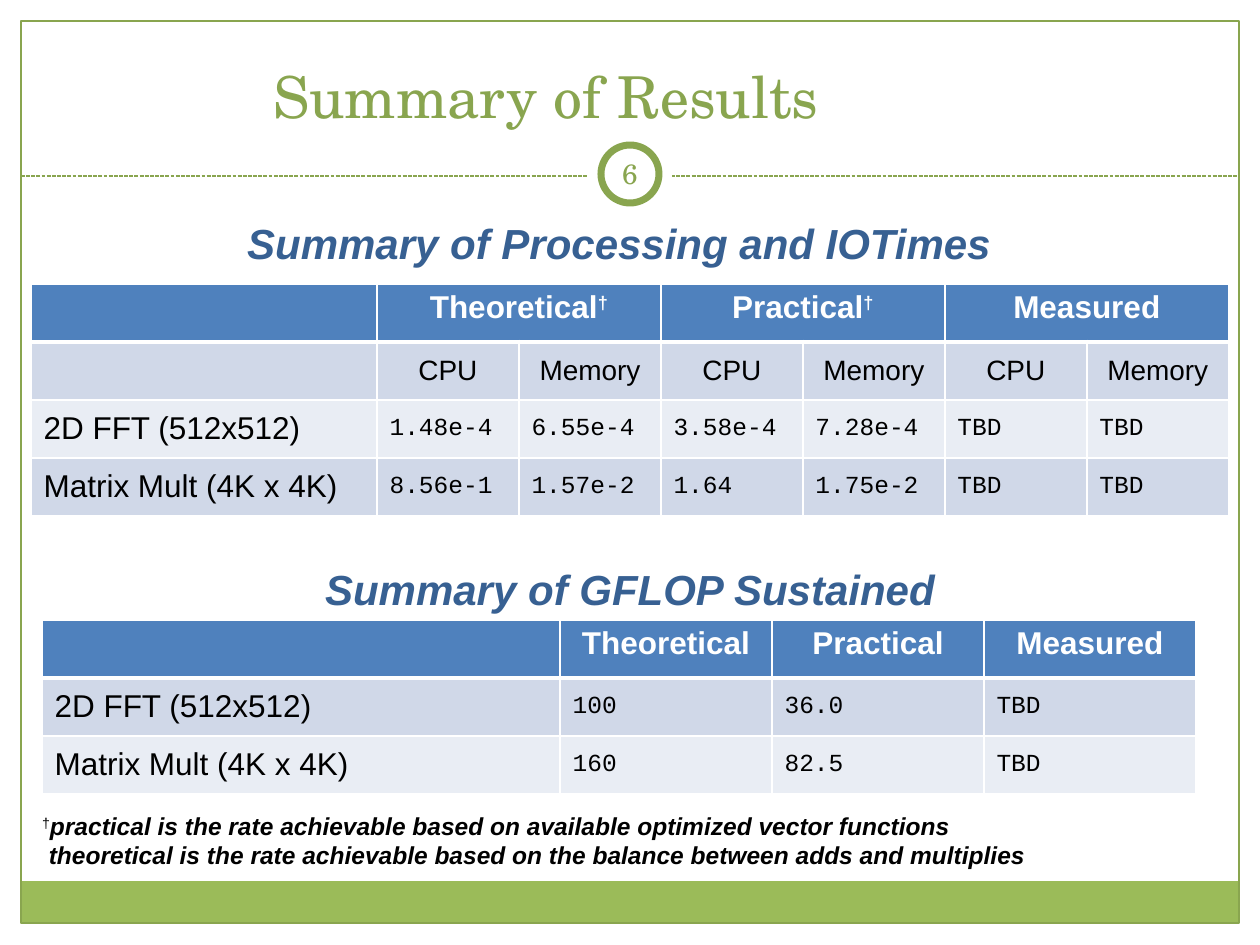
from dataclasses import dataclass, replace
from typing import NamedTuple

from lxml.etree import SubElement
from pptx import Presentation
from pptx.dml.color import RGBColor
from pptx.enum.dml import MSO_LINE
from pptx.enum.shapes import MSO_CONNECTOR, MSO_SHAPE
from pptx.enum.text import MSO_ANCHOR, PP_ALIGN
from pptx.oxml.ns import qn
from pptx.util import Emu, Pt

PIXELS_PER_INCH = 126


@dataclass(frozen=True)
class Style:
    """Look of a run of text."""
    size: int
    color: str
    font: str = "Arial"
    bold: bool = False
    italic: bool = False
    raised: bool = False


@dataclass(frozen=True)
class Theme:
    """Colours and text styles of the slide."""
    white: str = "FFFFFF"
    outline: str = "89A54F"
    footer: str = "9BBB59"
    header: str = "4F81BD"
    bands: tuple[str, str] = ("D0D8E8", "E9EDF4")
    title: Style = Style(33, "89A54F", "TeX Gyre Schola")
    number: Style = Style(16, "89A54F", "TeX Gyre Schola")
    caption: Style = Style(24, "376092", bold=True, italic=True)
    heading: Style = Style(18, "FFFFFF", bold=True)
    subheading: Style = Style(16, "000000")
    label: Style = Style(18, "000000")
    value: Style = Style(14, "000000", "Courier New")
    note: Style = Style(14, "000000", bold=True, italic=True)
    note_mark: Style = Style(14, "000000", raised=True)


class Box(NamedTuple):
    """Left, top, width and height in px."""
    left: int
    top: int
    width: int
    height: int


class Piece(NamedTuple):
    """A run of text with its style."""
    text: str
    style: Style


class TableData(NamedTuple):
    """Place, column widths, header span and rows of a table."""
    left: int
    top: int
    columns: list[int]
    span: int
    headings: list[list[Piece]]
    subheadings: list[str]
    rows: list[list[str]]


THEME = Theme()
ROW_HEIGHT = 58
MARK = Piece("†", replace(THEME.heading, raised=True))
THEORETICAL, PRACTICAL, MEASURED = (
    Piece(text, THEME.heading) for text in ("Theoretical", "Practical", "Measured"))
FFT, MATRIX = "2D FFT (512x512)", "Matrix Mult (4K x 4K)"

TIMES = TableData(
    31, 284, [346] + [142] * 6, 2,
    [[THEORETICAL, MARK], [PRACTICAL, MARK], [MEASURED]],
    ["CPU", "Memory"] * 3,
    [[FFT, "1.48e-4", "6.55e-4", "3.58e-4", "7.28e-4", "TBD", "TBD"],
     [MATRIX, "8.56e-1", "1.57e-2", "1.64", "1.75e-2", "TBD", "TBD"]])
GFLOP = TableData(
    42, 620, [518] + [212] * 3, 1,
    [[THEORETICAL], [PRACTICAL], [MEASURED]],
    [],
    [[FFT, "100", "36.0", "TBD"], [MATRIX, "160", "82.5", "TBD"]])


def px(length: int) -> Emu:
    """Turn px into EMU."""
    return Emu(round(length * 914400 / PIXELS_PER_INCH))


def rgb(color: str) -> RGBColor:
    """Turn a hex string into a colour."""
    return RGBColor.from_string(color)


def write(paragraph, pieces: list[Piece], align=PP_ALIGN.LEFT) -> None:
    """Fill a paragraph with styled runs."""
    paragraph.text = pieces[0].text
    paragraph.alignment = align
    for piece in pieces[1:]:
        paragraph.add_run().text = piece.text
    for run, (_, style) in zip(paragraph.runs, pieces):
        font = run.font
        font.name, font.size = style.font, Pt(style.size)
        font.bold, font.italic = style.bold, style.italic
        font.color.rgb = rgb(style.color)
        if style.raised:
            run._r.get_or_add_rPr().set("baseline", "30000")


def add_text(slide, box: Box, lines: list[list[Piece]], align=PP_ALIGN.CENTER, inset: int = 0) -> None:
    """Add a wrapped, vertically centred text box."""
    frame = slide.shapes.add_textbox(*map(px, box)).text_frame
    frame.word_wrap = True
    frame.vertical_anchor = MSO_ANCHOR.MIDDLE
    frame.margin_left = frame.margin_right = frame.margin_top = frame.margin_bottom = px(inset)
    frame.text = "\n".join(pieces[0].text for pieces in lines)
    for paragraph, pieces in zip(frame.paragraphs, lines):
        write(paragraph, pieces, align)


def add_figure(slide, kind: MSO_SHAPE, box: Box, fill: str = "", line: str = "", width: float = 0.75) -> None:
    """Add a preset shape with an optional fill and outline."""
    shape = slide.shapes.add_shape(kind, *map(px, box))
    shape.shadow.inherit = False
    if fill:
        shape.fill.solid()
        shape.fill.fore_color.rgb = rgb(fill)
    else:
        shape.fill.background()
    if line:
        shape.line.color.rgb = rgb(line)
        shape.line.width = Pt(width)
    else:
        shape.line.fill.background()


def add_divider(slide, left: int, right: int, top: int) -> None:
    """Add the dashed line under the title."""
    line = slide.shapes.add_connector(MSO_CONNECTOR.STRAIGHT, px(left), px(top), px(right), px(top))
    line.line.color.rgb = rgb(THEME.outline)
    line.line.width = Pt(0.75)
    line.line.dash_style = MSO_LINE.SQUARE_DOT
    SubElement(line._element.spPr, qn("a:effectLst"))


def format_cell(cell, row: int) -> None:
    """Give a cell its white borders and its band colour."""
    properties = cell._tc.get_or_add_tcPr()
    widths = {"L": 1, "R": 1, "T": 3 if row == 1 else 1, "B": 3 if row == 0 else 1}
    for side, width in widths.items():
        border = SubElement(properties, qn(f"a:ln{side}"), w=str(Pt(width)))
        fill = SubElement(border, qn("a:solidFill"))
        SubElement(fill, qn("a:srgbClr"), val=THEME.white)
    cell.fill.solid()
    cell.fill.fore_color.rgb = rgb(THEME.bands[(row - 1) % 2] if row else THEME.header)
    cell.vertical_anchor = MSO_ANCHOR.MIDDLE if row else MSO_ANCHOR.TOP


def add_results(slide, data: TableData) -> None:
    """Add a table of results."""
    first_row = 2 if data.subheadings else 1
    row_count = first_row + len(data.rows)
    box = Box(data.left, data.top, sum(data.columns), ROW_HEIGHT * row_count)
    table = slide.shapes.add_table(row_count, len(data.columns), *map(px, box)).table
    for column, width in zip(table.columns, data.columns):
        column.width = px(width)
    for index, row in enumerate(table.rows):
        row.height = px(ROW_HEIGHT)
        for cell in row.cells:
            format_cell(cell, index)
    for index, pieces in enumerate(data.headings):
        column = 1 + index * data.span
        cell = table.cell(0, column)
        if data.span > 1:
            cell.merge(table.cell(0, column + data.span - 1))
        write(cell.text_frame.paragraphs[0], pieces, PP_ALIGN.CENTER)
    for column, text in enumerate(data.subheadings, 1):
        paragraph = table.cell(1, column).text_frame.paragraphs[0]
        write(paragraph, [Piece(text, THEME.subheading)], PP_ALIGN.CENTER)
    for row, texts in enumerate(data.rows, first_row):
        for column, text in enumerate(texts):
            style = THEME.value if column else THEME.label
            write(table.cell(row, column).text_frame.paragraphs[0], [Piece(text, style)])


def main() -> None:
    """Build the slide and save it."""
    presentation = Presentation()
    presentation.slide_width, presentation.slide_height = px(1260), px(945)
    slide = presentation.slides.add_slide(presentation.slide_layouts[5])

    title = slide.shapes.title
    title.left, title.top, title.width, title.height = map(px, Box(42, 32, 1008, 104))
    title.text_frame.vertical_anchor = MSO_ANCHOR.BOTTOM
    write(title.text_frame.paragraphs[0], [Piece("Summary of Results", THEME.title)], PP_ALIGN.CENTER)

    add_figure(slide, MSO_SHAPE.RECTANGLE, Box(21, 881, 1217, 43), THEME.footer)
    add_figure(slide, MSO_SHAPE.RECTANGLE, Box(21, 21, 1218, 902), line=THEME.outline)
    add_divider(slide, 21, 1239, 176)
    add_figure(slide, MSO_SHAPE.OVAL, Box(588, 132, 84, 84), THEME.white)
    add_figure(slide, MSO_SHAPE.OVAL, Box(601, 145, 58, 58), THEME.white, THEME.outline, 4)
    add_text(slide, Box(598, 143, 64, 60), [[Piece("6", THEME.number)]], inset=6)

    add_text(slide, Box(199, 211, 840, 63), [[Piece("Summary of Processing and IOTimes", THEME.caption)]])
    add_results(slide, TIMES)
    add_text(slide, Box(210, 557, 840, 63), [[Piece("Summary of GFLOP Sustained", THEME.caption)]])
    add_results(slide, GFLOP)
    add_text(slide, Box(42, 809, 1092, 63), [
        [Piece("†", THEME.note_mark),
         Piece("practical is the rate achievable based on available optimized vector functions", THEME.note)],
        [Piece(" theoretical is the rate achievable based on the balance between adds and multiplies", THEME.note)],
    ], PP_ALIGN.LEFT)

    presentation.save("out.pptx")


if __name__ == "__main__":
    main()
